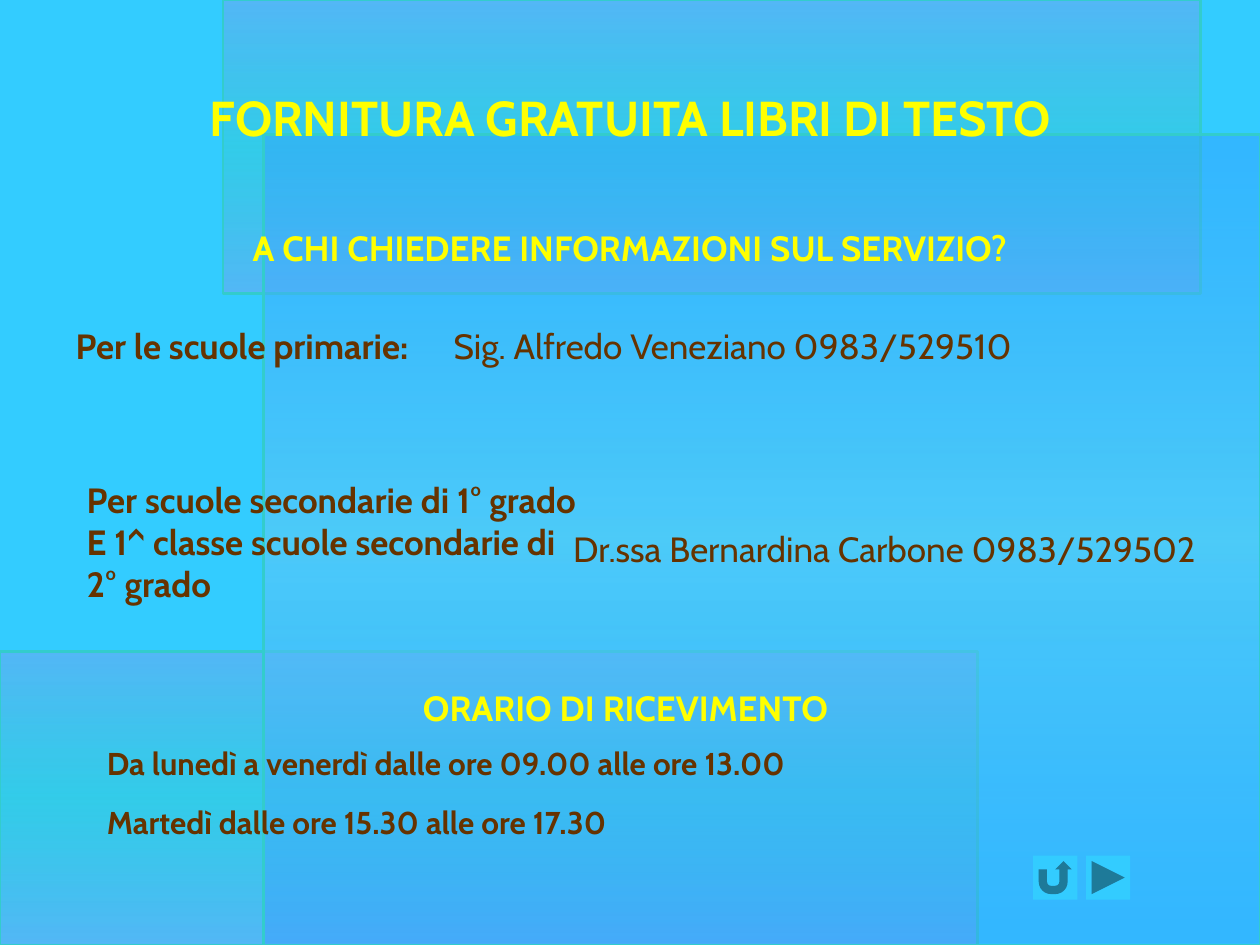
"""Build the slide with contacts and opening hours for free school textbooks."""
from lxml import etree
from pptx import Presentation
from pptx import util as u
from pptx.dml.color import RGBColor
from pptx.enum import shapes, text
from pptx.oxml.ns import qn

COLORS = {"sky": "33CCFF", "teal": "33CCCC", "lilac": "67AAF3", "blue": "3399FF",
          "pale": "5DCAF5", "yellow": "FFFF00", "brown": "663300"}
Inches, Pt = u.Inches, u.Pt


def rgb(name):
    return RGBColor.from_string(COLORS[name])


def write(sp, box, paragraphs, anchor=text.MSO_ANCHOR.TOP):
    """Place a text shape and fill it with (centred, space before, runs) paragraphs."""
    sp.left, sp.top, sp.width, sp.height = map(Inches, box)
    tf = sp.text_frame
    tf.word_wrap = True
    tf.auto_size = text.MSO_AUTO_SIZE.NONE
    tf.vertical_anchor = anchor
    for i, (centred, before, runs) in enumerate(paragraphs):
        p = tf.add_paragraph() if i else tf.paragraphs[0]
        p.alignment = text.PP_ALIGN.CENTER if centred else text.PP_ALIGN.LEFT
        p.space_before = Pt(before)
        pPr = p._p.get_or_add_pPr()
        pPr.set("marL", "0")
        pPr.set("indent", "0")
        etree.SubElement(pPr, qn("a:buNone"))
        for words, size, color, bold in runs:
            r = p.add_run()
            r.text = words
            r.font.name, r.font.size, r.font.bold = "Cabin", Pt(size), bold
            r.font.color.rgb = rgb(color)


prs = Presentation()
prs.slide_width, prs.slide_height = Inches(10), Inches(7.5)
s = prs.slides.add_slide(prs.slide_layouts[1])
s.background.fill.solid()
s.background.fill.fore_color.rgb = rgb("sky")
title, body = s.placeholders

lilac_band = [("lilac", 62), ("teal", 42), ("lilac", 62)]
blue_band = [("blue", 40), ("pale", 61), ("blue", 40)]
for box, stops in [((1.77, 0, 7.76, 2.33), lilac_band),
                   ((0, 5.17, 7.76, 2.33), lilac_band),
                   ((2.09, 1.07, 7.91, 6.43), blue_band)]:
    sp = s.shapes.add_shape(shapes.MSO_SHAPE.RECTANGLE, *map(Inches, box))
    sp.shadow.inherit = False
    sp.line.color.rgb = rgb("teal")
    sp.line.width = Pt(1.5)
    sp.fill.gradient()
    sp.fill.gradient_angle = 270
    gradient = sp._element.spPr.find(qn("a:gradFill")).find(qn("a:gsLst"))
    for old in list(gradient):
        gradient.remove(old)
    for i, (color, opacity) in enumerate(stops):
        gs = etree.SubElement(gradient, qn("a:gs"), pos=str(i * 50000))
        clr = etree.SubElement(gs, qn("a:srgbClr"), val=COLORS[color])
        etree.SubElement(clr, qn("a:alpha"), val=str(opacity * 1000))

for sp in (title, body):
    s.shapes._spTree.append(sp._element)

write(title, (0.5, 0.3, 9, 1.25),
      [(True, 0, [("FORNITURA GRATUITA LIBRI DI TESTO", 28, "yellow", True)])],
      text.MSO_ANCHOR.MIDDLE)
write(body, (0.5, 1.75, 9, 4.95), [
    (True, 0, [("A CHI CHIEDERE INFORMAZIONI SUL SERVIZIO?", 20, "yellow", True)]),
    (False, 32, [("Per le scuole primarie:\t", 20, "brown", True),
                 ("Sig. Alfredo Veneziano 0983/529510", 20, "brown", False)])])
tabs = etree.SubElement(body.text_frame.paragraphs[1]._p.pPr, qn("a:tabLst"))
etree.SubElement(tabs, qn("a:tab"), pos=str(Inches(3.39)), algn="l")

notes = [
    ((0.59, 3.75, 4.1, 1.43), [
        (False, 0, [("Per scuole secondarie di 1° grado", 20, "brown", True)]),
        (False, 0, [("E 1^ classe scuole secondarie di 2° grado", 20, "brown", True)])]),
    ((4.45, 4.14, 5.36, 0.43), [
        (False, 0, [("Dr.ssa Bernardina Carbone 0983/529502", 20, "brown", False)])]),
    ((0.75, 5.4, 8.43, 1.39), [
        (True, 0, [("ORARIO DI RICEVIMENTO", 20, "yellow", True)]),
        (False, 9, [("Da lunedì a venerdì dalle ore 09.00 alle ore 13.00", 18, "brown", True)]),
        (False, 12, [("Martedì dalle ore 15.30 alle ore 17.30", 18, "brown", True)])])]
for box, paragraphs in notes:
    write(s.shapes.add_textbox(*map(Inches, box)), box, paragraphs)

for left, button in [(8.62, shapes.MSO_SHAPE.ACTION_BUTTON_FORWARD_OR_NEXT),
                     (8.2, shapes.MSO_SHAPE.ACTION_BUTTON_RETURN)]:
    sp = s.shapes.add_shape(button, *map(Inches, (left, 6.79, 0.35, 0.35)))
    sp.shadow.inherit = False
    sp.fill.solid()
    sp.fill.fore_color.rgb = rgb("sky")
    sp.line.fill.background()

prs.save("out.pptx")
